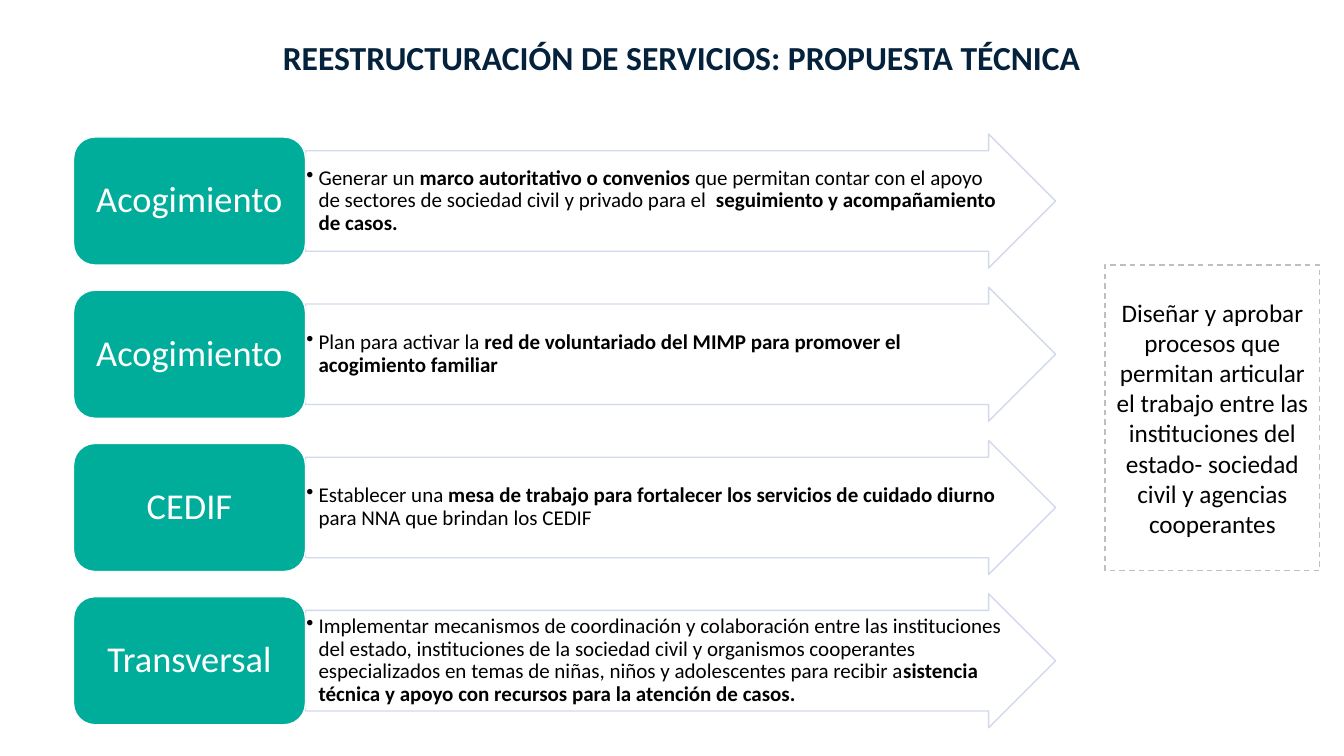
from dataclasses import dataclass

from lxml.etree import SubElement
from pptx import Presentation
from pptx.dml.color import RGBColor
from pptx.enum.dml import MSO_LINE
from pptx.enum.shapes import MSO_SHAPE as SHAPE
from pptx.enum.text import MSO_ANCHOR as ANCHOR, PP_ALIGN as ALIGN
from pptx.oxml.ns import qn
from pptx.shapes.autoshape import Shape
from pptx.slide import Slide
from pptx.util import Inches, Pt

FONT = "Calibri"
COLORS = {
    "white": "FFFFFF",
    "teal": "00AD9A",
    "arrow_line": "CFD5EA",
    "note_line": "BFBFBF",
    "text": "000000",
    "title": "05223C",
}


@dataclass
class Run:
    text: str
    bold: bool = False


@dataclass
class Service:
    name: str
    runs: list[Run]


SERVICES = [
    Service("Acogimiento", [
        Run("Generar un "),
        Run("marco autoritativo o convenios ", True),
        Run("que permitan contar con el apoyo de sectores de sociedad civil "
            "y privado para el  "),
        Run("seguimiento y acompañamiento de casos.", True),
    ]),
    Service("Acogimiento", [
        Run("Plan para activar la "),
        Run("red de voluntariado del MIMP para promover el acogimiento familiar", True),
    ]),
    Service("CEDIF", [
        Run("Establecer una "),
        Run("mesa de trabajo para fortalecer los servicios de cuidado diurno", True),
        Run(" para NNA que brindan los CEDIF"),
    ]),
    Service("Transversal", [
        Run("Implementar mecanismos de coordinación y colaboración entre las "
            "instituciones del estado, instituciones de la sociedad civil y "
            "organismos cooperantes especializados en temas de niñas, niños y "
            "adolescentes para recibir a"),
        Run("sistencia técnica y apoyo con recursos para la atención de casos.", True),
    ]),
]
NOTE = ("Diseñar y aprobar procesos que permitan articular el trabajo entre las "
        "instituciones del estado- sociedad civil y agencias cooperantes")
TITLE = "REESTRUCTURACIÓN DE SERVICIOS: PROPUESTA TÉCNICA"

ROW_TOP, ROW_STEP = 1.33, 1.52
BOX_LEFT, BOX_W, BOX_H = 0.73, 2.3, 1.27
ARROW_W, ARROW_H = 7.44, 1.33


def rgb(name: str) -> RGBColor:
    return RGBColor.from_string(COLORS[name])


def add_box(s: Slide, kind: SHAPE, left: float, top: float, width: float,
            height: float, fill: str, line: str) -> Shape:
    sp = s.shapes.add_shape(kind, Inches(left), Inches(top), Inches(width), Inches(height))
    sp.shadow.inherit = False
    sp.fill.solid()
    sp.fill.fore_color.rgb = rgb(fill)
    sp.line.color.rgb = rgb(line)
    sp.line.width = Pt(1)
    return sp


def write(sp: Shape, runs: list[Run], size: float, color: str,
          align: ALIGN = ALIGN.CENTER, spacing: float = 0.9, bullet: bool = False) -> None:
    tf = sp.text_frame
    tf.word_wrap = True
    tf.vertical_anchor = ANCHOR.MIDDLE
    p = tf.paragraphs[0]
    p.alignment = align
    p.line_spacing = spacing
    if bullet:
        pPr = p._p.get_or_add_pPr()
        pPr.set("marL", str(Inches(0.12)))
        pPr.set("indent", str(Inches(-0.12)))
        SubElement(pPr, qn("a:buChar")).set("char", "•")
    for run in runs:
        r = p.add_run()
        r.text = run.text
        r.font.name = FONT
        r.font.size = Pt(size)
        r.font.bold = run.bold
        r.font.color.rgb = rgb(color)


def add_service(s: Slide, service: Service, top: float) -> None:
    # Arrow with the proposal
    arrow = add_box(s, SHAPE.RIGHT_ARROW, BOX_LEFT + BOX_W, top, ARROW_W, ARROW_H,
                    "white", "arrow_line")
    arrow.adjustments[0] = 0.75
    arrow.adjustments[1] = 0.5
    for clr in arrow._element.spPr.iter(qn("a:srgbClr")):
        SubElement(clr, qn("a:alpha")).set("val", "90000")
    tf = arrow.text_frame
    tf.margin_left = tf.margin_right = tf.margin_top = tf.margin_bottom = Inches(0.01)
    write(arrow, service.runs, 15, "text", ALIGN.LEFT, bullet=True)

    # Service name
    box = add_box(s, SHAPE.ROUNDED_RECTANGLE, BOX_LEFT, top + (ARROW_H - BOX_H) / 2,
                  BOX_W, BOX_H, "teal", "white")
    write(box, [Run(service.name)], 26, "white")


def main() -> None:
    prs = Presentation()
    prs.slide_width, prs.slide_height = Inches(13.33), Inches(7.5)
    s = prs.slides.add_slide(prs.slide_layouts[6])

    # Service rows
    for i, service in enumerate(SERVICES):
        add_service(s, service, ROW_TOP + i * ROW_STEP)

    # Side note
    note = add_box(s, SHAPE.RECTANGLE, 10.96, 2.63, 2.13, 3.03, "white", "note_line")
    note.line.dash_style = MSO_LINE.DASH
    write(note, [Run(NOTE)], 18, "text", spacing=1.0)

    # Title
    title = s.shapes.add_textbox(Inches(2.37), Inches(0.14), Inches(8.78), Inches(0.91))
    write(title, [Run(TITLE, True)], 24, "title")

    prs.save("out.pptx")


if __name__ == "__main__":
    main()
